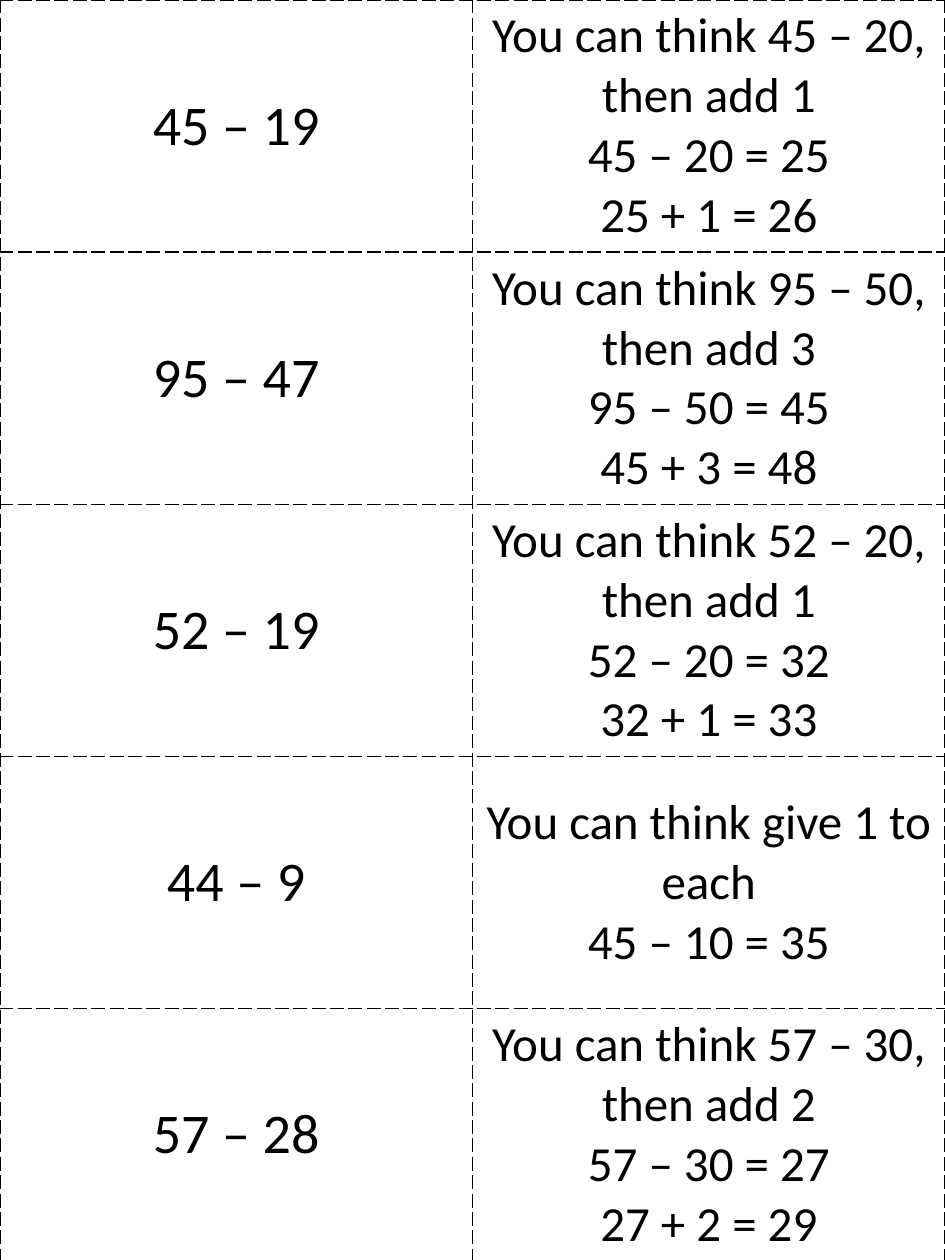
import pptx
import pptx.util
import pptx.dml.color
import pptx.enum.text
import pptx.oxml.ns
import lxml.etree

WIDTH, HEIGHT = 7.5, 10
FONT = "Calibri"
INK = "000000"
CARDS = [
    ("45 – 19", ["You can think 45 – 20, then add 1", "45 – 20 = 25", "25 + 1 = 26"]),
    ("95 – 47", ["You can think 95 – 50, then add 3", "95 – 50 = 45", "45 + 3 = 48"]),
    ("52 – 19", ["You can think 52 – 20, then add 1", "52 – 20 = 32", "32 + 1 = 33"]),
    ("44 – 9", ["You can think give 1 to each", "45 – 10 = 35"]),
    ("57 – 28", ["You can think 57 – 30, then add 2", "57 – 30 = 27", "27 + 2 = 29"]),
]


def color(hex_string):
    return pptx.dml.color.RGBColor.from_string(hex_string)


def write_text(frame, lines, size, font=FONT, ink=INK):
    """Put each line in its own centred paragraph."""
    for index, line in enumerate(lines):
        para = frame.add_paragraph() if index else frame.paragraphs[0]
        para.alignment = pptx.enum.text.PP_ALIGN.CENTER
        span = para.add_run()
        span.text = line
        span.font.size = pptx.util.Pt(size)
        span.font.name = font
        span.font.color.rgb = color(ink)


def add_cut_lines(cell, ink=INK, width=1):
    """Give all four sides of a cell a long-dashed border."""
    properties = cell._tc.get_or_add_tcPr()
    qn = pptx.oxml.ns.qn
    for side in ("a:lnL", "a:lnR", "a:lnT", "a:lnB"):
        line = lxml.etree.SubElement(properties, qn(side), w=str(pptx.util.Pt(width)))
        fill = lxml.etree.SubElement(line, qn("a:solidFill"))
        lxml.etree.SubElement(fill, qn("a:srgbClr"), val=ink)
        lxml.etree.SubElement(line, qn("a:prstDash"), val="lgDash")


def fill_card(cell, lines, size):
    add_cut_lines(cell)
    cell.fill.background()
    cell.vertical_anchor = pptx.enum.text.MSO_ANCHOR.MIDDLE
    write_text(cell.text_frame, lines, size=size)


def add_card_table(page, cards):
    """Cover the page with equal cards: question left, strategy right."""
    frame = page.shapes.add_table(
        len(cards), 2, 0, 0, pptx.util.Inches(WIDTH), pptx.util.Inches(HEIGHT))
    table = frame.table
    table.first_row = False
    table.horz_banding = False
    for row, (question, strategy) in enumerate(cards):
        fill_card(table.cell(row, 0), [question], size=32)
        fill_card(table.cell(row, 1), strategy, size=28)


def main():
    deck = pptx.Presentation()
    deck.slide_width = pptx.util.Inches(WIDTH)
    deck.slide_height = pptx.util.Inches(HEIGHT)
    page = deck.slides.add_slide(deck.slide_layouts[6])
    add_card_table(page, CARDS)
    deck.save("out.pptx")


if __name__ == "__main__":
    main()
